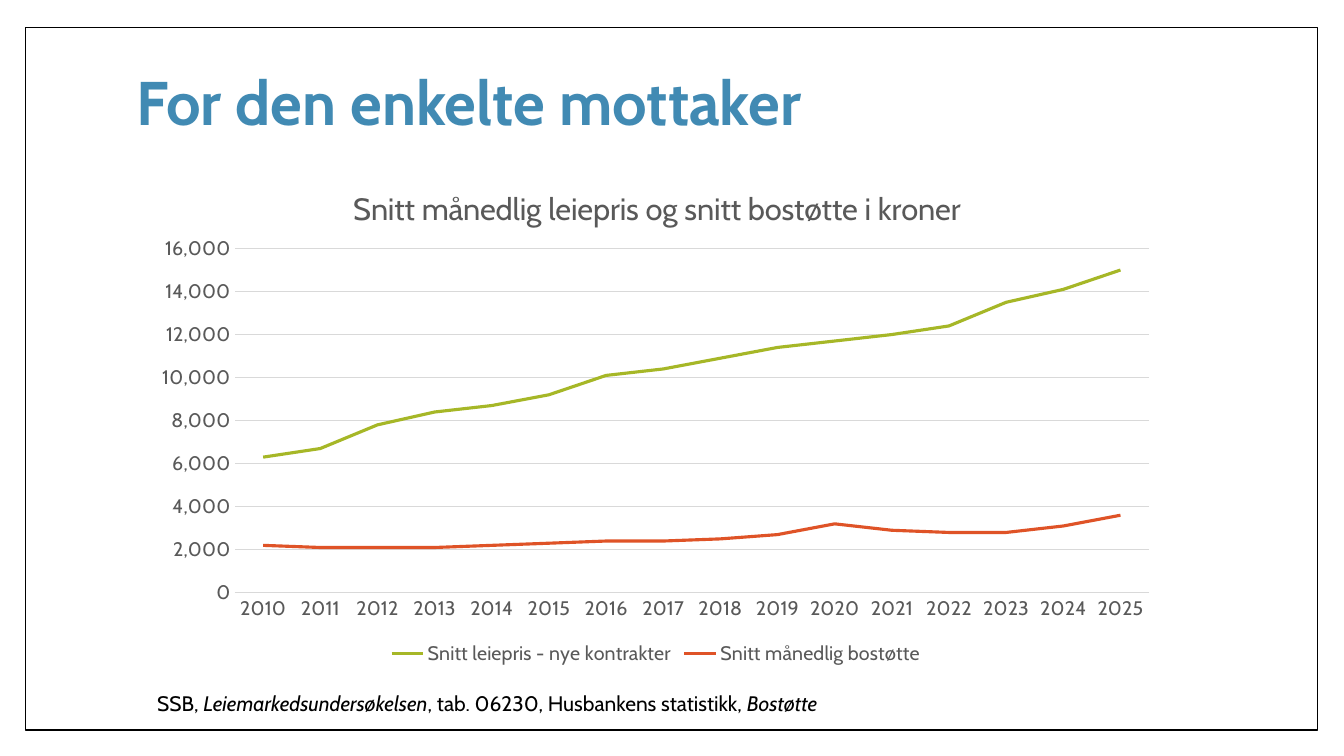
from lxml.etree import SubElement
from pptx import Presentation
from pptx.chart.data import CategoryChartData
from pptx.dml.color import RGBColor
from pptx.enum.chart import XL_CHART_TYPE as ChartType, XL_LEGEND_POSITION as LegendPosition
from pptx.enum.chart import XL_MARKER_STYLE as MarkerStyle, XL_TICK_MARK as TickMark
from pptx.enum.shapes import MSO_SHAPE as ShapeKind
from pptx.enum.text import MSO_ANCHOR as Anchor, MSO_AUTO_SIZE as AutoSize, PP_ALIGN as Align
from pptx.oxml import parse_xml
from pptx.oxml.ns import nsdecls, qn
from pptx.util import Pt

FONT = "Cabin"
GREY = "595959"
GRID = "D9D9D9"

YEARS = [str(year) for year in range(2010, 2026)]
SERIES = [
    ("Snitt leiepris - nye kontrakter", "A6B727",
     [6300, 6700, 7800, 8400, 8700, 9200, 10100, 10400,
      10900, 11400, 11700, 12000, 12400, 13500, 14100, 15000]),
    ("Snitt månedlig bostøtte", "DF5327",
     [2200, 2100, 2100, 2100, 2200, 2300, 2400, 2400,
      2500, 2700, 3200, 2900, 2800, 2800, 3100, 3600]),
]
SOURCES = [
    ("SSB, ", False),
    ("Leiemarkedsundersøkelsen", True),
    (", tab. 06230, Husbankens statistikk, ", False),
    ("Bostøtte", True),
]


def rgb(color):
    return RGBColor.from_string(color)


def format_font(font, size, color, bold=False, italic=False):
    font.name = FONT
    font.size = Pt(size)
    font.bold = bold
    font.italic = italic
    font.color.rgb = rgb(color)


def add_text(paragraph, text, **style):
    run = paragraph.add_run()
    run.text = text
    format_font(run.font, **style)


def format_line(line, color, width):
    line.color.rgb = rgb(color)
    line.width = Pt(width)


def set_layout(element, index, **fractions):
    existing = element.find(qn("c:layout"))
    if existing is not None:
        element.remove(existing)
    layout = parse_xml(f"<c:layout {nsdecls('c')}><c:manualLayout/></c:layout>")
    if "w" in fractions:
        SubElement(layout[0], qn("c:layoutTarget"), val="inner")
    for side in ("x", "y"):
        SubElement(layout[0], qn(f"c:{side}Mode"), val="edge")
    for name, fraction in fractions.items():
        SubElement(layout[0], qn(f"c:{name}"), val=str(fraction))
    element.insert(index, layout)


def add_frame(slide, left, top, width, height):
    frame = slide.shapes.add_shape(ShapeKind.RECTANGLE, Pt(left), Pt(top), Pt(width), Pt(height))
    frame.shadow.inherit = False
    frame.fill.solid()
    frame.fill.fore_color.rgb = rgb("FFFFFF")
    format_line(frame.line, "000000", 1)
    slide.shapes.title._element.addprevious(frame._element)


def add_title(slide, left, top, width, height):
    title = slide.shapes.title
    title.left, title.top, title.width, title.height = Pt(left), Pt(top), Pt(width), Pt(height)
    title.text_frame.vertical_anchor = Anchor.TOP
    title.text_frame.auto_size = AutoSize.NONE
    paragraph = title.text_frame.paragraphs[0]
    paragraph.alignment = Align.LEFT
    paragraph.line_spacing = 0.9
    add_text(paragraph, "For den enkelte mottaker", size=44, color="418AB3", bold=True)


def add_sources(slide, left, top, width, height):
    box = slide.shapes.add_textbox(Pt(left), Pt(top), Pt(width), Pt(height))
    box.text_frame.word_wrap = True
    paragraph = box.text_frame.paragraphs[0]
    paragraph.line_spacing = 0.9
    paragraph._p.get_or_add_pPr().set("marL", str(Pt(3.6)))
    for text, italic in SOURCES:
        add_text(paragraph, text, size=15, color="000000", italic=italic)


def format_axes(chart):
    for axis in (chart.category_axis, chart.value_axis):
        axis.major_tick_mark = axis.minor_tick_mark = TickMark.NONE
        format_font(axis.tick_labels.font, size=14, color=GREY)
    format_line(chart.category_axis.format.line, GRID, 0.75)
    values = chart.value_axis
    values.minimum_scale, values.maximum_scale, values.major_unit = 0, 16000, 2000
    values.tick_labels.number_format = "#,##0"
    values.tick_labels.number_format_is_linked = False
    values.format.line.fill.background()
    values.has_major_gridlines = True
    format_line(values.major_gridlines.format.line, GRID, 0.75)


def add_rent_chart(slide, left, top, width, height):
    data = CategoryChartData(number_format="#,##0")
    data.categories = YEARS
    for name, _, values in SERIES:
        data.add_series(name, values)
    chart = slide.shapes.add_chart(
        ChartType.LINE, Pt(left), Pt(top), Pt(width), Pt(height), data).chart
    format_font(chart.font, size=10, color="000000")

    chart.has_title = True
    add_text(chart.chart_title.text_frame.paragraphs[0],
             "Snitt månedlig leiepris og snitt bostøtte i kroner", size=22, color=GREY)
    set_layout(chart.chart_title._element, 1, x=0.2, y=0.05)
    plot_area = chart._chartSpace.chart.plotArea
    set_layout(plot_area, 0, x=0.09, y=0.18, w=0.89, h=0.67)

    chart.has_legend = True
    chart.legend.position = LegendPosition.BOTTOM
    chart.legend.include_in_layout = False
    format_font(chart.legend.font, size=14, color=GREY)
    format_axes(chart)

    chart.plots[0].vary_by_categories = False
    for series, (_, color, _) in zip(chart.plots[0].series, SERIES):
        series.smooth = False
        series.marker.style = MarkerStyle.NONE
        format_line(series.format.line, color, 2.25)


def main():
    presentation = Presentation()
    presentation.slide_width, presentation.slide_height = Pt(960), Pt(540)
    slide = presentation.slides.add_slide(presentation.slide_layouts[5])
    add_frame(slide, 18, 19.5, 923, 502)
    add_title(slide, 90, 48, 778, 107)
    add_sources(slide, 101.5, 492, 590, 37)
    add_rent_chart(slide, 101.5, 111.5, 734, 367)
    presentation.save("out.pptx")


if __name__ == "__main__":
    main()
